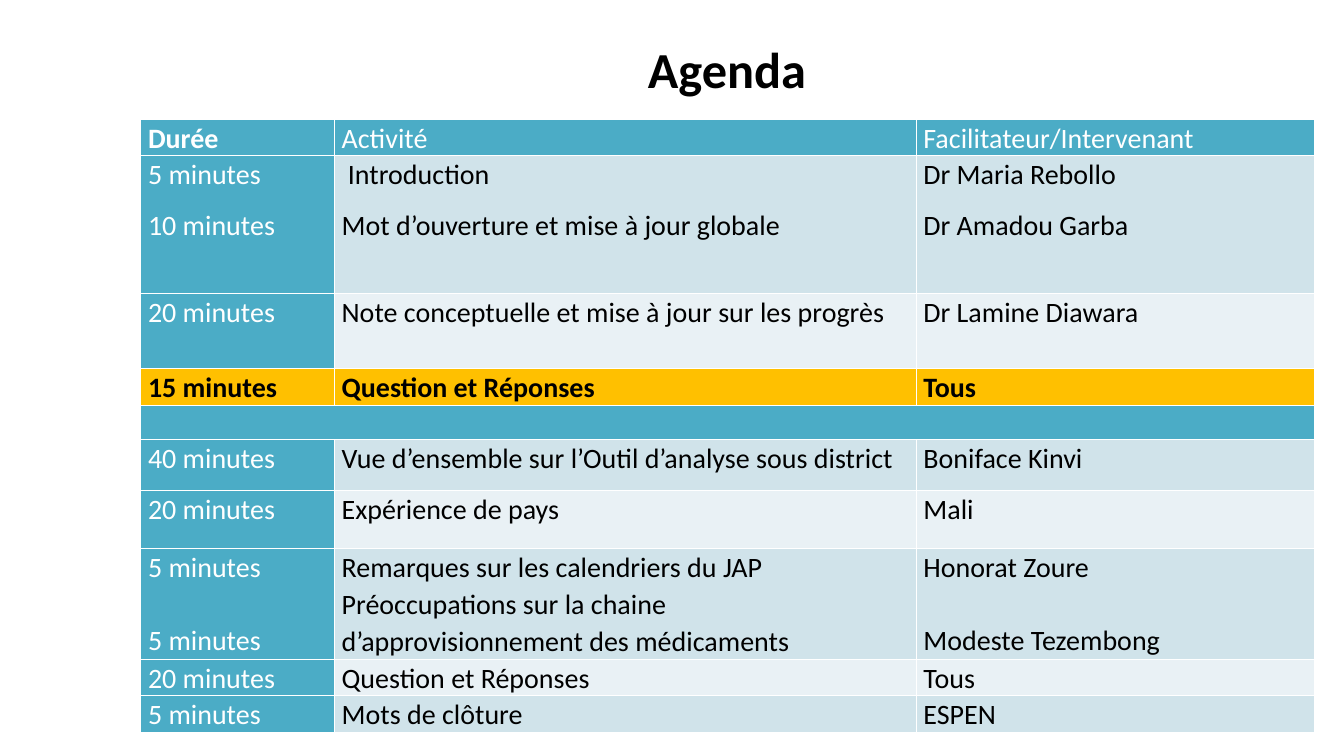
import pptx
import pptx.dml.color
import pptx.enum.text
import pptx.oxml
import pptx.oxml.ns
import pptx.util
from pptx.util import Cm

COLORS = {
    "white": "FFFFFF",
    "black": "000000",
    "teal": "4BACC6",
    "gold": "FFC000",
    "odd": "D0E3EA",
    "even": "E9F1F5",
}
COLUMN_WIDTHS = [4.88, 14.66, 10.03]
HEADER, QUESTIONS, BREAK, CLOSING_REMARKS = 0, 3, 4, 7
AGENDA = [
    (0.91, [["Durée"], ["Activité"], ["Facilitateur/Intervenant"]]),
    (3.48, [["5 minutes", "10 minutes"],
            [" Introduction", "Mot d’ouverture et mise à jour globale"],
            ["Dr Maria Rebollo", "Dr Amadou Garba"]]),
    (1.89, [["20 minutes"], ["Note conceptuelle et mise à jour sur les progrès"],
            ["Dr Lamine Diawara"]]),
    (0.91, [["15 minutes"], ["Question et Réponses"], ["Tous"]]),
    (0.86, [[], [], []]),
    (1.27, [["40 minutes"], ["Vue d’ensemble sur l’Outil d’analyse sous district"],
            ["Boniface Kinvi"]]),
    (1.48, [["20 minutes"], ["Expérience de pays"], ["Mali"]]),
    (2.78, [["5 minutes", "5 minutes"],
            ["Remarques sur les calendriers du JAP ",
             "Préoccupations sur la chaine d’approvisionnement des médicaments"],
            ["Honorat Zoure", "Modeste Tezembong"]]),
    (0.91, [["20 minutes"], ["Question et Réponses"], ["Tous"]]),
    (0.91, [["5 minutes"], ["Mots de clôture"], ["ESPEN"]]),
]


class AgendaSlide:
    font = "Calibri"
    body_size = 20
    title_size = 36

    def __init__(self, deck):
        self.slide = deck.slides.add_slide(deck.slide_layouts[5])

    def color(self, name):
        return pptx.dml.color.RGBColor.from_string(COLORS[name])

    def run(self, paragraph, text, size, color, bold):
        run = paragraph.add_run()
        run.text = text
        run.font.name = self.font
        run.font.size = pptx.util.Pt(size)
        run.font.bold = bold
        run.font.color.rgb = self.color(color)

    def title(self, text, left, top, width, height):
        heading = self.slide.shapes.title
        heading.left, heading.top = Cm(left), Cm(top)
        heading.width, heading.height = Cm(width), Cm(height)
        frame = heading.text_frame
        frame.word_wrap = True
        frame.auto_size = pptx.enum.text.MSO_AUTO_SIZE.NONE
        frame.vertical_anchor = pptx.enum.text.MSO_ANCHOR.MIDDLE
        frame.paragraphs[0].alignment = pptx.enum.text.PP_ALIGN.CENTER
        self.run(frame.paragraphs[0], text, self.title_size, "black", True)

    def borders(self, cell):
        properties = cell._tc.get_or_add_tcPr()
        for side in "LRTB":
            properties.append(pptx.oxml.parse_xml(
                f'<a:ln{side} {pptx.oxml.ns.nsdecls("a")} w="12700"><a:solidFill>'
                f'<a:srgbClr val="{COLORS["white"]}"/></a:solidFill></a:ln{side}>'))

    def cell(self, cell, lines, fill, color, bold, after, gap):
        cell.margin_left = cell.margin_right = Cm(0.18)
        cell.margin_top = cell.margin_bottom = 0
        self.borders(cell)
        cell.fill.solid()
        cell.fill.fore_color.rgb = self.color(fill)
        frame = cell.text_frame
        for index, line in enumerate(lines):
            paragraph = frame.add_paragraph() if index else frame.paragraphs[0]
            paragraph.line_spacing = 1.07
            paragraph.space_after = pptx.util.Pt(after)
            if index:
                paragraph.space_before = pptx.util.Pt(gap)
            self.run(paragraph, line, self.body_size, color, bold)

    def table(self, left, top):
        height = sum(row_height for row_height, _ in AGENDA)
        agenda = self.slide.shapes.add_table(
            len(AGENDA), len(COLUMN_WIDTHS), Cm(left), Cm(top),
            Cm(sum(COLUMN_WIDTHS)), Cm(height)).table
        agenda.first_row = agenda.horz_banding = False
        for column, width in zip(agenda.columns, COLUMN_WIDTHS):
            column.width = Cm(width)
        for row, (row_height, entries) in enumerate(AGENDA):
            agenda.rows[row].height = Cm(row_height)
            for column, lines in enumerate(entries):
                fill, color = ("odd" if row % 2 else "even"), "black"
                if row == QUESTIONS:
                    fill = "gold"
                elif row in (HEADER, BREAK) or column == 0:
                    fill, color = "teal", "white"
                bold = row == QUESTIONS or (row == HEADER and column == 0)
                after = 0 if row == CLOSING_REMARKS else 10
                gap = 26 if row == CLOSING_REMARKS and column != 1 else 0
                self.cell(agenda.cell(row, column), lines, fill, color, bold, after, gap)
        agenda.cell(BREAK, 0).merge(agenda.cell(BREAK, len(COLUMN_WIDTHS) - 1))


def main():
    deck = pptx.Presentation()
    deck.slide_width, deck.slide_height = Cm(33.87), Cm(19.05)
    agenda_slide = AgendaSlide(deck)
    agenda_slide.title("Agenda ", 3.86, 0.89, 29.21, 1.65)
    agenda_slide.table(3.55, 3)
    deck.save("out.pptx")


if __name__ == "__main__":
    main()
